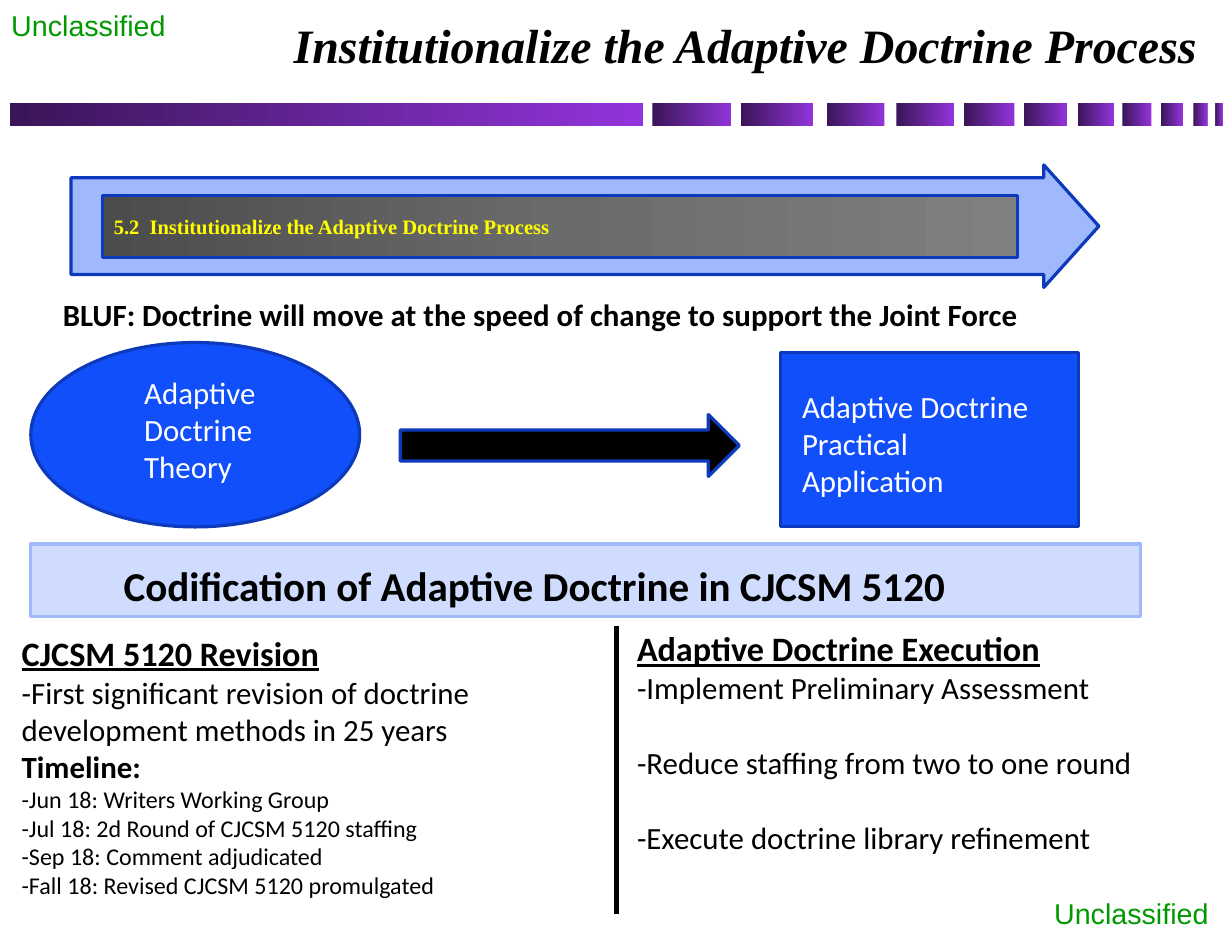
"""Build the slide about institutionalizing the adaptive doctrine process."""
from copy import deepcopy

from pptx import Presentation
from pptx import util as u
from pptx.dml.color import RGBColor
from pptx.enum import shapes, text
from pptx.oxml import parse_xml

BLACK = RGBColor(0x00, 0x00, 0x00)
WHITE = RGBColor(0xFF, 0xFF, 0xFF)
GREEN = RGBColor(0x00, 0x99, 0x00)
YELLOW = RGBColor(0xFF, 0xFF, 0x00)
BLUE = RGBColor(0x11, 0x4F, 0xFB)
DARK_BLUE = RGBColor(0x0D, 0x3A, 0xBA)
LIGHT_BLUE = RGBColor(0xA0, 0xB9, 0xFD)
PALE_BLUE = RGBColor(0xCF, 0xDC, 0xFE)
PURPLES = [RGBColor(0x3A, 0x15, 0x58), RGBColor(0x92, 0x34, 0xDB)]
GRAYS = [RGBColor(0x4C, 0x4C, 0x4C), RGBColor(0x6B, 0x6B, 0x6B), RGBColor(0x80, 0x80, 0x80)]

SLIDE_SIZE = (774, 594)
BAR_TOP, BAR_HEIGHT = 64.8, 14.4
BARS = [
    (6.3, 397.6), (409.9, 49.7), (465.4, 45.2), (519.4, 36.3), (563.2, 36.3), (605.6, 31.7),
    (643.2, 27.2), (677, 22.6), (705.2, 18.1), (729.5, 13.6), (749.7, 8.9), (763.5, 4.5),
]

FORMATS = {
    "marking": {"name": "Arial", "size": u.Pt(18)},
    "title": {"name": "Times New Roman", "size": u.Pt(30.1), "bold": True, "italic": True},
    "banner": {"name": "Times New Roman", "size": u.Pt(12.9), "bold": True},
    "codification": {"name": "Calibri", "size": u.Pt(25.8), "bold": True},
    "heading": {"name": "Calibri", "size": u.Pt(21.5), "bold": True, "underline": True},
    "strong": {"name": "Calibri", "size": u.Pt(19.4), "bold": True},
    "body": {"name": "Calibri", "size": u.Pt(19.4)},
    "date": {"name": "Calibri", "size": u.Pt(15.1)},
}

ARROW, RECTANGLE, OVAL = (
    shapes.MSO_SHAPE.RIGHT_ARROW, shapes.MSO_SHAPE.RECTANGLE, shapes.MSO_SHAPE.OVAL,
)
PANELS = [
    (ARROW, (44.6, 103.7, 645.8, 77), [LIGHT_BLUE], DARK_BLUE, (0.79, 0.449)),
    (RECTANGLE, (64.5, 123.1, 574.6, 38.9), GRAYS, DARK_BLUE, ()),
    (OVAL, (19.4, 215.3, 206.6, 115.9), [BLUE], DARK_BLUE, ()),
    (ARROW, (251.5, 260.6, 213, 38.9), [BLACK], DARK_BLUE, ()),
    (RECTANGLE, (490.5, 221.8, 187.2, 109.4), [BLUE], DARK_BLUE, ()),
    (RECTANGLE, (19.4, 342, 697, 45.4), [PALE_BLUE], LIGHT_BLUE, ()),
]
BANNER_TEXT = [("banner", "5.2  Institutionalize the Adaptive Doctrine Process", 0)]

REVISION = [
    ("heading", "CJCSM 5120 Revision", 0),
    ("body", "-First significant revision of doctrine development methods in 25 years", 0),
    ("strong", "Timeline:", 0),
    ("date", "-Jun 18: Writers Working Group", 0),
    ("date", "-Jul 18: 2d Round of CJCSM 5120 staffing", 0),
    ("date", "-Sep 18: Comment adjudicated", 0),
    ("date", "-Fall 18: Revised CJCSM 5120 promulgated", 0),
]
EXECUTION_GAP = 23.7
EXECUTION = [
    ("heading", "Adaptive Doctrine Execution", 0),
    ("body", "-Implement Preliminary Assessment", EXECUTION_GAP),
    ("body", "-Reduce staffing from two to one round", EXECUTION_GAP),
    ("body", "-Execute doctrine library refinement", 0),
]
BLUF = "BLUF: Doctrine will move at the speed of change to support the Joint Force"
TEXTS = [
    ((0, 1.4, 112.3, 28.8), GREEN, [("marking", "Unclassified", 0)]),
    ((655.2, 559.4, 112.3, 28.8), GREEN, [("marking", "Unclassified", 0)]),
    ((83.5, 231.1, 135.4, 77.8), WHITE, [("body", "Adaptive Doctrine Theory", 0)]),
    ((496.8, 239.8, 174.2, 54), WHITE, [("body", "Adaptive Doctrine Practical Application", 0)]),
    ((70.6, 348.5, 678.2, 38.9), BLACK,
     [("codification", "Codification of Adaptive Doctrine in CJCSM 5120", 0)]),
    ((6.5, 393.8, 380.9, 176.4), BLACK, REVISION),
    ((393.1, 391, 380.9, 150.5), BLACK, EXECUTION),
    ((32.4, 182.2, 702.7, 31), BLACK, [("strong", BLUF, 0)]),
]
TITLE_BOX = (19.4, 5.8, 741.6, 45.4)
TITLE = [("title", "Institutionalize the Adaptive Doctrine Process", 0)]
DIVIDER = (387.4, 393.8, 387.4, 574.6)


def points(values):
    return [u.Pt(value) for value in values]


def write(frame, lines, color, alignment=text.PP_ALIGN.LEFT):
    frame.word_wrap = True
    for index, (style, words, gap) in enumerate(lines):
        paragraph = frame.add_paragraph() if index else frame.paragraphs[0]
        paragraph.alignment = alignment
        if gap:
            paragraph.space_after = u.Pt(gap)
        run = paragraph.add_run()
        run.text = words
        for name, value in FORMATS[style].items():
            setattr(run.font, name, value)
        run.font.color.rgb = color


def paint(shape, colors):
    if len(colors) == 1:
        shape.fill.solid()
        shape.fill.fore_color.rgb = colors[0]
        return
    shape.fill.gradient()
    shape.fill.gradient_angle = 0
    stop_list = shape._element.spPr.xpath("./a:gradFill/a:gsLst")[0]
    for _ in colors[2:]:
        stop_list.append(deepcopy(stop_list[0]))
    for index, stop in enumerate(shape.fill.gradient_stops):
        stop.position = index / (len(colors) - 1)
        stop.color.rgb = colors[index]


def add_panel(slide, kind, box, colors, outline=None, adjustments=()):
    shape = slide.shapes.add_shape(kind, *points(box))
    shape.shadow.inherit = False
    for index, value in enumerate(adjustments):
        shape.adjustments[index] = value
    paint(shape, colors)
    if outline is None:
        shape.line.fill.background()
    else:
        shape.line.color.rgb = outline
        shape.line.width = u.Pt(2)
    return shape


def add_text(slide, box, color, lines, alignment=text.PP_ALIGN.LEFT):
    frame = slide.shapes.add_textbox(*points(box)).text_frame
    write(frame, lines, color, alignment)
    return frame


def add_divider(slide):
    line = slide.shapes.add_connector(shapes.MSO_CONNECTOR.STRAIGHT, *points(DIVIDER))
    line.line.color.rgb = BLACK
    line.line.width = u.Pt(3.25)
    line._element.spPr.append(parse_xml(
        '<a:effectLst xmlns:a="http://schemas.openxmlformats.org/drawingml/2006/main"/>'))


def main():
    presentation = Presentation()
    presentation.slide_width, presentation.slide_height = points(SLIDE_SIZE)
    slide = presentation.slides.add_slide(presentation.slide_layouts[6])

    for left, width in BARS:
        add_panel(slide, RECTANGLE, (left, BAR_TOP, width, BAR_HEIGHT), PURPLES)

    title = add_text(slide, TITLE_BOX, BLACK, TITLE, text.PP_ALIGN.RIGHT)
    title.margin_left = title.margin_right = u.Pt(8.64)
    title.margin_top = title.margin_bottom = u.Pt(4.32)

    panels = [add_panel(slide, *panel) for panel in PANELS]
    banner = panels[1].text_frame
    banner.vertical_anchor = text.MSO_ANCHOR.MIDDLE
    write(banner, BANNER_TEXT, YELLOW)

    for box, color, lines in TEXTS:
        add_text(slide, box, color, lines)
    add_divider(slide)
    presentation.save("out.pptx")


if __name__ == "__main__":
    main()
